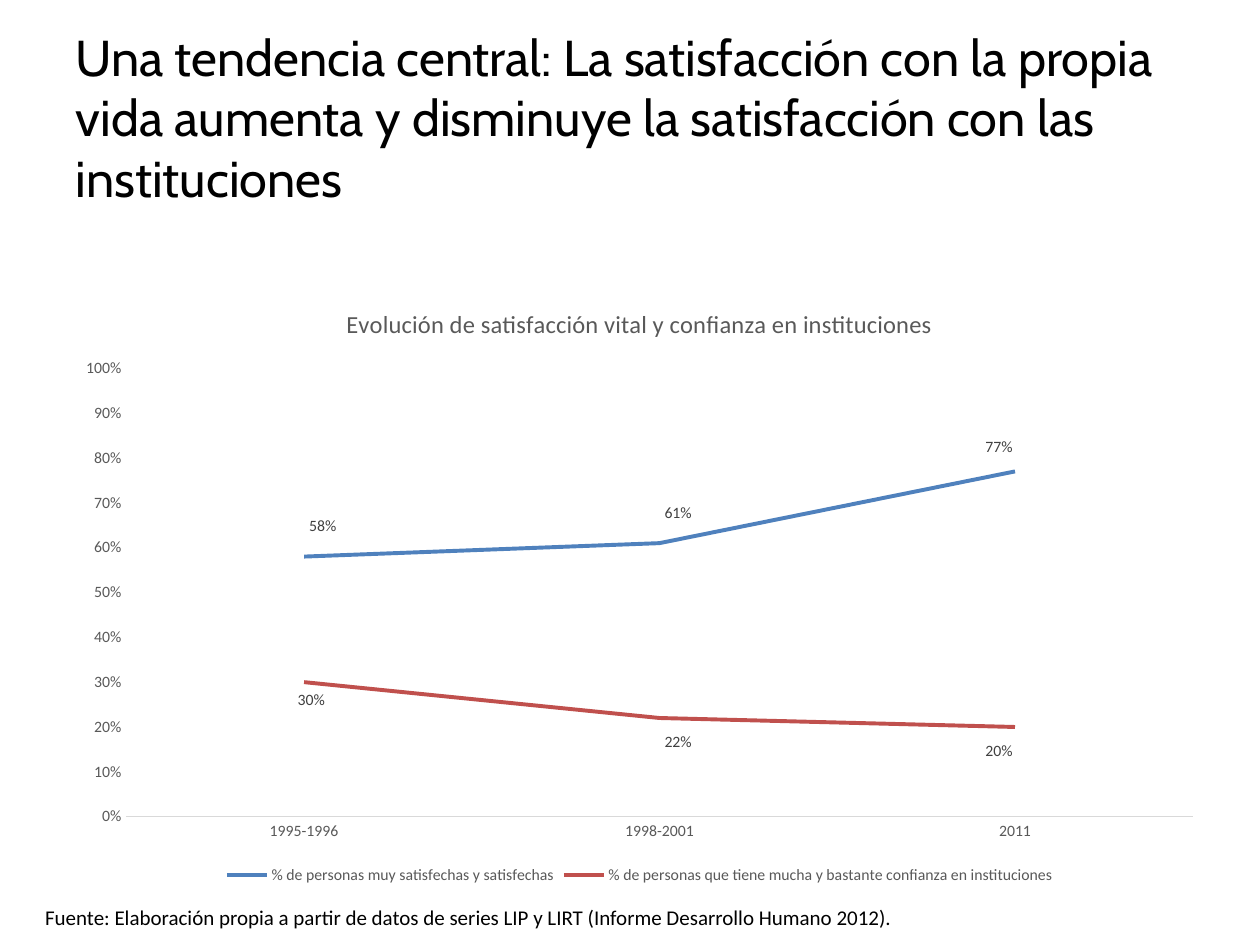
"""Build a slide with a line chart on life satisfaction and trust in institutions."""
from lxml import etree
from pptx import Presentation
from pptx.chart.data import CategoryChartData
from pptx.dml.color import RGBColor
from pptx.enum.chart import (XL_CHART_TYPE, XL_LABEL_POSITION, XL_LEGEND_POSITION,
                             XL_MARKER_STYLE, XL_TICK_MARK)
from pptx.enum.text import MSO_ANCHOR, MSO_AUTO_SIZE, PP_ALIGN
from pptx.oxml.ns import qn
from pptx.util import Pt

LINE_CHART = XL_CHART_TYPE.LINE
RIGHT = XL_LABEL_POSITION.RIGHT
BOTTOM = XL_LEGEND_POSITION.BOTTOM
NO_MARKER = XL_MARKER_STYLE.NONE
NO_TICK = XL_TICK_MARK.NONE

BLACK = RGBColor(0x00, 0x00, 0x00)
DARK_GRAY = RGBColor(0x40, 0x40, 0x40)
GRAY = RGBColor(0x59, 0x59, 0x59)
LIGHT_GRAY = RGBColor(0xD9, 0xD9, 0xD9)
BLUE = RGBColor(0x4F, 0x81, 0xBD)
RED = RGBColor(0xC0, 0x50, 0x4D)

TITLE = ("Una tendencia central: La satisfacción con la propia vida aumenta "
         "y disminuye la satisfacción con las instituciones")
SOURCE = ("Fuente: Elaboración propia a partir de datos de series LIP y LIRT "
          "(Informe Desarrollo Humano 2012).")
CHART_TITLE = "Evolución de satisfacción vital y confianza en instituciones"
PERIODS = ["1995-1996", "1998-2001", "2011"]
SERIES = [
    {"name": "% de personas muy satisfechas y satisfechas",
     "values": [0.58, 0.61, 0.77], "color": BLUE,
     "label_shifts": [(0, -0.05), (0, -0.05), (-0.03, -0.04)]},
    {"name": "% de personas que tiene mucha y bastante confianza en instituciones",
     "values": [0.3, 0.22, 0.2], "color": RED,
     "label_shifts": [(-0.01, 0.03), (0, 0.04), (-0.03, 0.04)]},
]
NO_LEADER_LINES = (
    '<c:extLst xmlns:c="http://schemas.openxmlformats.org/drawingml/2006/chart">'
    '<c:ext uri="{CE6537A1-D6FC-4f65-9D91-7224C49458BB}" '
    'xmlns:c15="http://schemas.microsoft.com/office/drawing/2012/chart">'
    '<c15:showLeaderLines val="0"/></c:ext></c:extLst>')


def style_font(font, size, color, name="Calibri"):
    font.size = Pt(size)
    font.name = name
    font.bold = False
    font.color.rgb = color


def add_text(text_frame, text, size, color, name="Calibri"):
    paragraph = text_frame.paragraphs[0]
    run = paragraph.add_run()
    run.text = text
    style_font(run.font, size, color, name)
    return paragraph


def set_layout(parent, index, **settings):
    for old_layout in parent.findall(qn("c:layout")):
        parent.remove(old_layout)
    layout = etree.Element(qn("c:layout"))
    manual = etree.SubElement(layout, qn("c:manualLayout"))
    for tag, value in settings.items():
        etree.SubElement(manual, qn(f"c:{tag}")).set("val", str(value))
    parent.insert(index, layout)


def hide_leader_lines(series):
    labels = series._element.find(qn("c:dLbls"))
    for leader_lines in labels.findall(qn("c:showLeaderLines")):
        leader_lines.set("val", "0")
    labels.append(etree.fromstring(NO_LEADER_LINES))


def add_title(slide):
    title = slide.shapes.title
    title.left, title.top, title.width, title.height = Pt(36), Pt(21.6), Pt(648), Pt(90)
    frame = title.text_frame
    frame.word_wrap = True
    frame.auto_size = MSO_AUTO_SIZE.NONE
    frame.vertical_anchor = MSO_ANCHOR.MIDDLE
    add_text(frame, TITLE, 28.8, BLACK, "Cabin").alignment = PP_ALIGN.LEFT


def style_axes(chart):
    for axis in (chart.category_axis, chart.value_axis):
        axis.major_tick_mark = axis.minor_tick_mark = NO_TICK
        axis.has_major_gridlines = False
        style_font(axis.tick_labels.font, 9, GRAY)
    category_line = chart.category_axis.format.line
    category_line.color.rgb = LIGHT_GRAY
    category_line.width = Pt(0.75)
    value_axis = chart.value_axis
    value_axis.minimum_scale, value_axis.maximum_scale = 0, 1
    value_axis.major_unit = 0.1
    value_axis.format.line.fill.background()
    value_axis.tick_labels.number_format = "0%"
    value_axis.tick_labels.number_format_is_linked = False


def style_series(series, details):
    series.smooth = False
    series.marker.style = NO_MARKER
    series.format.line.color.rgb = details["color"]
    series.format.line.width = Pt(2.25)
    labels = series.data_labels
    labels.show_value = True
    labels.number_format = "0%"
    labels.number_format_is_linked = False
    style_font(labels.font, 9, DARK_GRAY)
    for index in range(len(PERIODS)):
        label = series.points[index].data_label
        style_font(label.font, 9, DARK_GRAY)
        label.position = RIGHT
    point_labels = series._element.iter(qn("c:dLbl"))
    for point_label, (x, y) in zip(point_labels, details["label_shifts"]):
        set_layout(point_label, 1, x=x, y=y)
    hide_leader_lines(series)


def add_satisfaction_chart(slide):
    data = CategoryChartData(number_format="0%")
    data.categories = PERIODS
    for details in SERIES:
        data.add_series(details["name"], details["values"])
    chart = slide.shapes.add_chart(
        LINE_CHART, Pt(36), Pt(162), Pt(658.8), Pt(346.32), data).chart
    style_font(chart.font, 10, BLACK)
    chart.has_title = True
    add_text(chart.chart_title.text_frame, CHART_TITLE, 14, GRAY)
    chart.chart_title.include_in_layout = False
    chart.has_legend = True
    chart.legend.position = BOTTOM
    chart.legend.include_in_layout = False
    style_font(chart.legend.font, 9, GRAY)
    chart.plots[0].vary_by_categories = False
    style_axes(chart)
    for series, details in zip(chart.plots[0].series, SERIES):
        style_series(series, details)
    plot_area = chart._chartSpace.find(f".//{qn('c:plotArea')}")
    set_layout(plot_area, 0, layoutTarget="inner", xMode="edge", yMode="edge",
               x=0.055, y=0.14, w=0.925, h=0.74)


def add_source(slide):
    box = slide.shapes.add_textbox(Pt(18.72), Pt(513.36), Pt(520), Pt(21.6))
    box.text_frame.word_wrap = False
    box.text_frame.auto_size = MSO_AUTO_SIZE.SHAPE_TO_FIT_TEXT
    add_text(box.text_frame, SOURCE, 12, BLACK).alignment = PP_ALIGN.LEFT


def main():
    presentation = Presentation()
    presentation.slide_width, presentation.slide_height = Pt(720), Pt(540)
    slide = presentation.slides.add_slide(presentation.slide_layouts[5])
    add_title(slide)
    add_satisfaction_chart(slide)
    add_source(slide)
    presentation.save("out.pptx")


if __name__ == "__main__":
    main()
